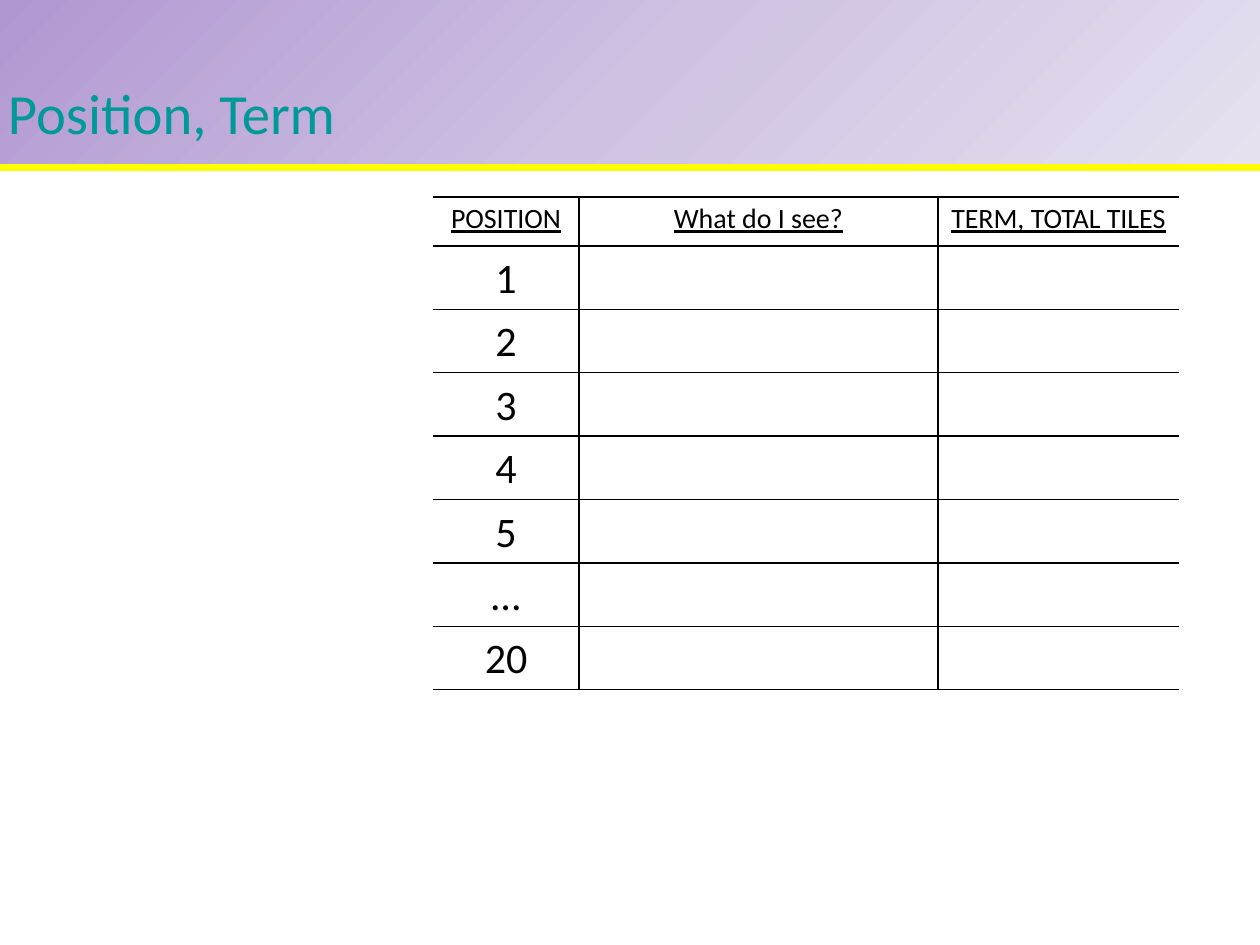
from copy import deepcopy

from lxml import etree
from pptx import Presentation, util as u
from pptx.dml.color import RGBColor
from pptx.enum import shapes, text
from pptx.oxml import ns

PX = u.Inches(1) / 126
FONT = "Calibri"
BLACK = "000000"
HEADINGS = ["POSITION", "What do I see?", "TERM, TOTAL TILES"]
POSITIONS = ["1", "2", "3", "4", "5", "…", "20"]
COLUMN_WIDTHS = [146, 359, 241]
HEADER_HEIGHT = 49


def px(length):
    """Turn a length in px into EMU."""
    return u.Emu(round(length * PX))


def color(hex_code):
    """Turn a hex string into a colour."""
    return RGBColor.from_string(hex_code)


def write(frame, wording, size, ink=BLACK, align=text.PP_ALIGN.LEFT,
          spacing=1.0, underline=False):
    """Write one formatted paragraph into a text frame."""
    paragraph = frame.paragraphs[0]
    paragraph.alignment = align
    paragraph.line_spacing = spacing
    run = paragraph.add_run()
    run.text = wording
    run.font.name = FONT
    run.font.size = u.Pt(size)
    run.font.underline = underline
    run.font.color.rgb = color(ink)


def fill_gradient(shape, hex_codes, angle):
    """Fill a shape with evenly spaced gradient stops."""
    shape.fill.gradient()
    shape.fill.gradient_angle = angle
    stop_list = shape.fill._fill._gradFill.find(ns.qn("a:gsLst"))
    while len(stop_list) < len(hex_codes):
        stop_list.append(deepcopy(stop_list[0]))
    for index, (stop, code) in enumerate(zip(shape.fill.gradient_stops, hex_codes)):
        stop.position = index / (len(hex_codes) - 1)
        stop.color.rgb = color(code)


def add_banner(slide, left, top, width, height):
    """Draw the title banner and the yellow rule along its lower edge."""
    banner = slide.shapes.add_shape(
        shapes.MSO_SHAPE.RECTANGLE, px(left), px(top), px(width), px(height))
    banner.shadow.inherit = False
    banner.line.fill.background()
    fill_gradient(banner, ["B197D2", "CEC1E2", "E7E1F0"], 315)
    frame = banner.text_frame
    frame.word_wrap = True
    frame.vertical_anchor = text.MSO_ANCHOR.BOTTOM
    frame.margin_left = px(8)
    frame.margin_bottom = px(22)
    write(frame, "Position, Term", 32.4, ink="009999")

    rule = slide.shapes.add_connector(
        shapes.MSO_CONNECTOR.STRAIGHT,
        px(left), px(top + height), px(left + width), px(top + height))
    rule.line.color.rgb = color("FFFF00")
    rule.line.width = u.Pt(4)
    etree.SubElement(rule._element.spPr, ns.qn("a:effectLst"))


def set_borders(cell, visible_sides):
    """Rule the visible sides of a cell and clear the others."""
    properties = cell._tc.get_or_add_tcPr()
    for side in "LRTB":
        border = etree.SubElement(properties, ns.qn(f"a:ln{side}"), w=str(u.Pt(1)))
        if side in visible_sides:
            paint = etree.SubElement(border, ns.qn("a:solidFill"))
            etree.SubElement(paint, ns.qn("a:srgbClr"), val=BLACK)
        else:
            etree.SubElement(border, ns.qn("a:noFill"))


def add_position_table(slide, left, top, width, height):
    """Draw the table of positions with blank cells to fill in."""
    rows = [HEADINGS] + [[position, "", ""] for position in POSITIONS]
    table = slide.shapes.add_table(
        len(rows), len(HEADINGS), px(left), px(top), px(width), px(height)).table
    table.first_row = False
    table.horz_banding = False
    for column, column_width in zip(table.columns, COLUMN_WIDTHS):
        column.width = px(column_width)
    body_height = (height - HEADER_HEIGHT) / len(POSITIONS)
    for row_index, wordings in enumerate(rows):
        is_header = row_index == 0
        table.rows[row_index].height = px(HEADER_HEIGHT if is_header else body_height)
        for cell, wording, sides in zip(
                table.rows[row_index].cells, wordings, ["RTB", "LRTB", "LTB"]):
            set_borders(cell, sides)
            cell.fill.background()
            if wording:
                cell.margin_left = cell.margin_right = px(9)
                cell.margin_top = cell.margin_bottom = 0
                write(cell.text_frame, wording, 16 if is_header else 24,
                      align=text.PP_ALIGN.CENTER, spacing=1.15, underline=is_header)


def main():
    """Build the slide and save it."""
    deck = Presentation()
    deck.slide_width, deck.slide_height = px(1260), px(945)
    slide = deck.slides.add_slide(deck.slide_layouts[6])
    add_banner(slide, 0, 0, 1260, 168)
    add_position_table(slide, 433, 197, sum(COLUMN_WIDTHS), 493)
    deck.save("out.pptx")


if __name__ == "__main__":
    main()
